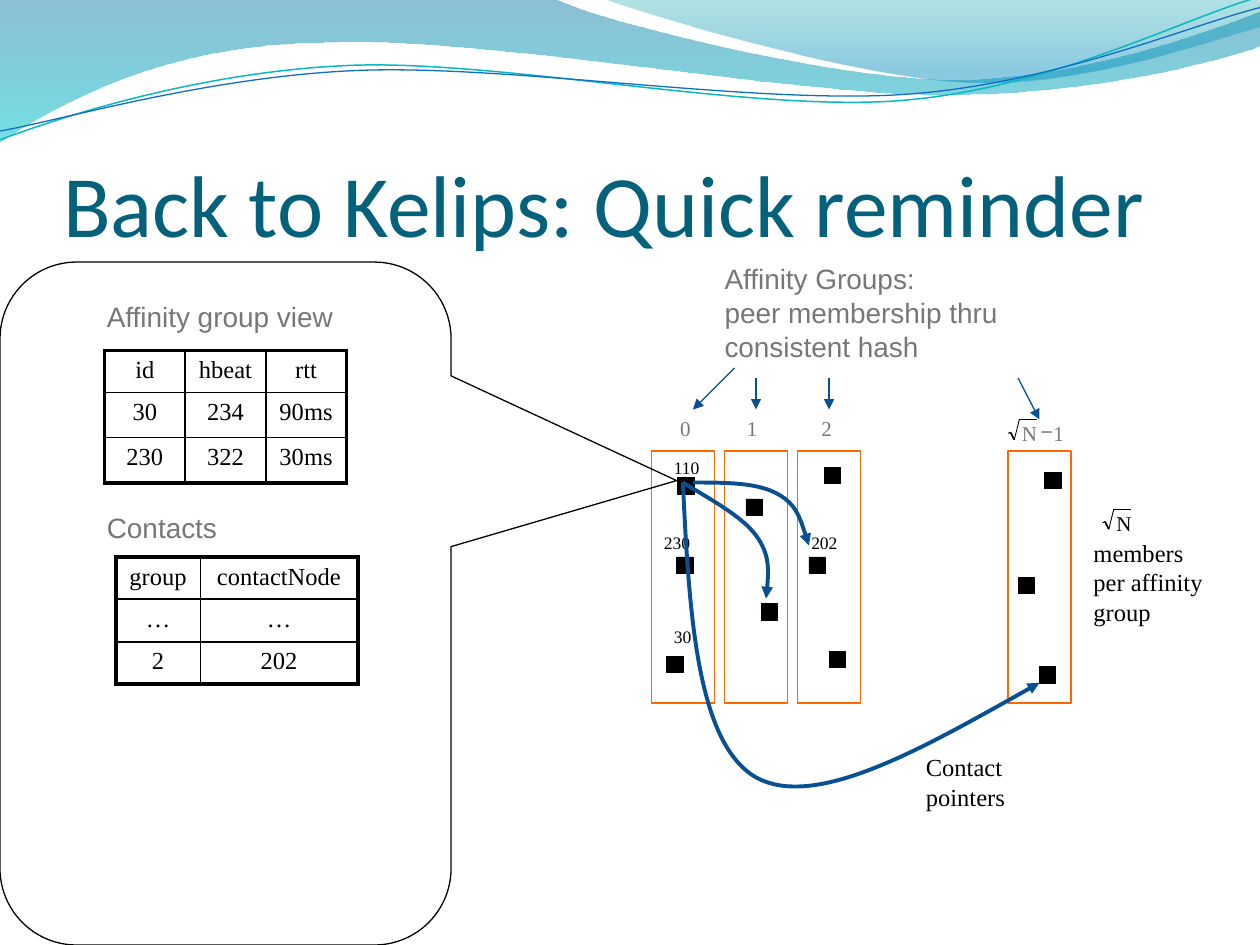
from dataclasses import dataclass
from itertools import pairwise

from lxml.etree import SubElement
from pptx import Presentation
from pptx.dml.color import RGBColor
from pptx.enum.shapes import MSO_CONNECTOR as Connector, MSO_SHAPE as Preset
from pptx.enum.text import MSO_ANCHOR as Anchor, PP_ALIGN as Align
from pptx.oxml.ns import qn
from pptx.util import Inches, Pt

Point = tuple[float, float]


@dataclass(frozen=True)
class Theme:
    title: str = "04617B"
    grey: str = "777777"
    black: str = "000000"
    orange: str = "FF6600"
    arrow: str = "085091"
    teal: str = "0AB8BF"
    blue: str = "0F6FC6"
    sans: str = "Arial"
    serif: str = "Times New Roman"
    heading: str = "Calibri"
    title_size: int = 50
    label_size: int = 16
    body_size: int = 14
    index_size: int = 12
    node_size: int = 10


@dataclass(frozen=True)
class Stop:
    position: float
    color: str
    opacity: int


@dataclass(frozen=True)
class Curve:
    """Start point, then steps of one point (straight) or three (cubic curve)."""
    start: Point
    steps: list[list[Point]]
    stops: tuple[Stop, ...] = ()
    color: str = ""
    width: float = 0
    arrow: bool = False


@dataclass(frozen=True)
class Grid:
    left: float
    top: float
    widths: list[float]
    heights: list[float]
    rows: list[list[str]]


THEME = Theme()
SQUARE = 0.13

WAVES = [
    Curve((0, -0.01), [
        [(4.4, -0.01)], [(4.76, 0.17), (6.64, 0.63), (7.58, 0.63)],
        [(8.53, 0.63), (9.58, 0.26), (10, 0.09)], [(10.01, 0.36)],
        [(9.83, 0.44), (8.7, 0.76), (7.46, 0.75)], [(6.22, 0.75), (3.82, 0.28), (2.57, 0.34)],
        [(1.29, 0.35), (0.46, 0.83), (-0.01, 1.13)]],
        stops=(Stop(0, "0074A1", 45), Stop(1, "00C6CF", 55))),
    Curve((4.79, -0.01), [
        [(5.09, 0.11), (6.82, 0.62), (7.69, 0.65)], [(8.56, 0.69), (9.61, 0.32), (10, 0.21)],
        [(10, 0)]],
        stops=(Stop(0, "00A1A9", 30), Stop(0.8, "008BBF", 45))),
    Curve((0, 1.11), [
        [(0.48, 0.93), (1.58, 0.57), (2.77, 0.52)], [(3.95, 0.47), (5.93, 0.89), (7.13, 0.8)],
        [(8.33, 0.71), (9.38, 0.15), (9.98, -0.02)]], color=THEME.teal, width=0.85),
    Curve((0, 1.04), [
        [(0.47, 0.96), (1.64, 0.61), (2.83, 0.56)], [(4.03, 0.51), (5.97, 0.83), (7.17, 0.75)],
        [(8.36, 0.67), (9.41, 0.21), (10, 0.06)]], color=THEME.blue, width=0.75),
]
POINTERS = [
    Curve(start, steps, color=THEME.arrow, width=2.25, arrow=True) for start, steps in [
        ((5.42, 3.83), [[(5.65, 3.97), (5.89, 4.1), (6, 4.25)],
                        [(6.11, 4.4), (6.1, 4.58), (6.08, 4.75)]]),
        ((5.5, 3.83), [[(5.76, 3.83), (6.01, 3.83), (6.17, 3.92)],
                       [(6.32, 4), (6.37, 4.17), (6.42, 4.33)]]),
        ((5.42, 3.83), [[(5.47, 4.87), (5.53, 5.9), (6, 6.17)],
                        [(6.47, 6.43), (7.36, 5.92), (8.25, 5.42)]])]]
GROUP_LEFTS = [5.17, 5.75, 6.33, 8]
GROUP_INDEXES = [("0", 5.3), ("1", 5.83), ("2", 6.42)]
NODES = [(5.38, 3.79), (5.37, 4.42), (5.29, 5.21), (6.58, 5.17), (5.92, 3.96), (6.04, 4.79),
         (6.54, 3.71), (6.42, 4.42), (8.29, 3.75), (8.08, 4.58), (8.25, 5.29)]
NODE_IDS = [("30", 5.25, 4.92), ("110", 5.25, 3.58), ("230", 5.17, 4.17), ("202", 6.34, 4.17)]
HASH_ARROWS = [((5.83, 2.92), (5.5, 3.25)), ((6, 3), (6, 3.25)),
               ((6.58, 3), (6.58, 3.25)), ((8.08, 3), (8.25, 3.33))]
RADICAL = [(0, 0.11), (0.02, 0.1), (0.05, 0.16), (0.09, 0), (0.23, 0)]
RADICAL_WIDTHS = [0.5, 1, 0.5, 0.5]
TABLES = [
    Grid(0.83, 2.78, [0.64] * 3, [0.33, 0.36, 0.36],
         [["id", "hbeat", "rtt"], ["30", "234", "90ms"], ["230", "322", "30ms"]]),
    Grid(0.92, 4.42, [0.67, 1.25], [0.33, 0.34, 0.33],
         [["group", "contactNode"], ["…", "…"], ["2", "202"]]),
]


def write(frame, text: str, *, size: float, font: str = THEME.serif, color: str = THEME.black,
          align=Align.LEFT, wrap: bool = True) -> None:
    frame.word_wrap = wrap
    for index, line in enumerate(text.split("\n")):
        paragraph = frame.add_paragraph() if index else frame.paragraphs[0]
        paragraph.alignment = align
        run = paragraph.add_run()
        run.text = line
        run.font.size, run.font.name = Pt(size), font
        run.font.color.rgb = RGBColor.from_string(color)


def add_text(slide, text: str, left: float, top: float, width: float, height: float, *,
             insets=(0.1, 0.05, 0.1, 0.05), anchor=Anchor.TOP, **style) -> None:
    frame = slide.shapes.add_textbox(*map(Inches, (left, top, width, height))).text_frame
    frame.margin_left, frame.margin_top, frame.margin_right, frame.margin_bottom = map(
        Inches, insets)
    frame.vertical_anchor = anchor
    write(frame, text, **style)


def set_line(shape, color: str, width: float, arrow: bool = False) -> None:
    shape.line.color.rgb = RGBColor.from_string(color)
    shape.line.width = Pt(width)
    if arrow:
        SubElement(shape.line._get_or_add_ln(), qn("a:tailEnd"), type="triangle")


def add_line(slide, start: Point, end: Point, color: str, width: float, arrow=False) -> None:
    line = slide.shapes.add_connector(Connector.STRAIGHT, *map(Inches, (*start, *end)))
    set_line(line, color, width, arrow)
    SubElement(line.element.spPr, qn("a:effectLst"))


def add_preset(slide, preset, left: float, top: float, width: float, height: float, *,
               line: str, line_width: float, fill: str = ""):
    shape = slide.shapes.add_shape(preset, *map(Inches, (left, top, width, height)))
    shape.shadow.inherit = False
    if fill:
        shape.fill.solid()
        shape.fill.fore_color.rgb = RGBColor.from_string(fill)
    else:
        shape.fill.background()
    set_line(shape, line, line_width)
    return shape


def add_curve(slide, curve: Curve) -> None:
    builder = slide.shapes.build_freeform(*map(Inches, curve.start))
    points = [(Inches(x), Inches(y)) for step in curve.steps for x, y in step]
    builder.add_line_segments(points, close=bool(curve.stops))
    shape = builder.convert_to_shape()
    shape.shadow.inherit = False
    # Merge each run of three straight segments into one cubic segment
    segments = iter(list(shape.element.iter(qn("a:lnTo"))))
    for step in curve.steps:
        parts = [next(segments) for _ in step]
        if len(parts) == 3:
            parts[0].tag = qn("a:cubicBezTo")
            for part in parts[1:]:
                parts[0].append(part[0])
                part.getparent().remove(part)
    if not curve.stops:
        shape.fill.background()
        set_line(shape, curve.color, curve.width, curve.arrow)
        return
    shape.fill.gradient()
    shape.fill.gradient_angle = 270
    for target, stop in zip(shape.fill.gradient_stops, curve.stops):
        target.position = stop.position
        target.color.rgb = RGBColor.from_string(stop.color)
    for color, stop in zip(shape.element.spPr.iter(qn("a:srgbClr")), curve.stops):
        SubElement(color, qn("a:alpha"), val=str(stop.opacity * 1000))
    shape.line.fill.background()


def add_root(slide, left: float, top: float, color: str) -> None:
    corners = [(left + x, top + y) for x, y in RADICAL]
    for (start, end), width in zip(pairwise(corners), RADICAL_WIDTHS):
        add_line(slide, start, end, THEME.black, width)
    add_symbol(slide, "N", left + 0.11, top + 0.01, color=color)


def add_symbol(slide, text: str, left: float, top: float, **style) -> None:
    add_text(slide, text, left, top, 0.12, 0.2, insets=(0, 0, 0, 0), wrap=False,
             size=THEME.index_size, **style)


def add_grid(slide, grid: Grid) -> None:
    last_row, last_column = len(grid.heights) - 1, len(grid.widths) - 1
    table = slide.shapes.add_table(
        last_row + 1, last_column + 1, Inches(grid.left), Inches(grid.top),
        Inches(sum(grid.widths)), Inches(sum(grid.heights))).table
    table.first_row = table.horz_banding = False
    for column, width in zip(table.columns, grid.widths):
        column.width = Inches(width)
    for r, (row, height) in enumerate(zip(table.rows, grid.heights)):
        row.height = Inches(height)
        for c, cell in enumerate(row.cells):
            cell.margin_left = cell.margin_right = Inches(0.05)
            write(cell.text_frame, grid.rows[r][c], size=THEME.body_size, align=Align.CENTER)
            outer = {"lnL": c == 0, "lnR": c == last_column, "lnT": r == 0, "lnB": r == last_row}
            properties = cell._tc.get_or_add_tcPr()
            for side, thick in outer.items():
                border = SubElement(properties, qn(f"a:{side}"), w=str(Pt(2.25 if thick else 1)))
                SubElement(SubElement(border, qn("a:solidFill")), qn("a:srgbClr"), val=THEME.black)
            cell.fill.background()


def main() -> None:
    presentation = Presentation()
    presentation.slide_width, presentation.slide_height = Inches(10), Inches(7.5)
    slide = presentation.slides.add_slide(presentation.slide_layouts[6])
    label = dict(size=THEME.label_size, font=THEME.sans, color=THEME.grey)

    # Header waves and title
    for wave in WAVES:
        add_curve(slide, wave)
    add_text(slide, "Affinity Groups:\npeer membership thru consistent hash",
             5.75, 2.08, 2.59, 0.8, insets=(0, 0, 0, 0), **label)
    add_text(slide, "Back to Kelips: Quick reminder", 0.5, 0.77, 9.08, 1.25,
             insets=(0, 0.05, 0, 0), anchor=Anchor.BOTTOM,
             size=THEME.title_size, font=THEME.heading, color=THEME.title)

    # Affinity groups and their nodes
    for left in GROUP_LEFTS:
        add_preset(slide, Preset.RECTANGLE, left, 3.58, 0.5, 2, line=THEME.orange, line_width=0.75)
    for text, left in GROUP_INDEXES:
        add_text(slide, text, left, 3.25, 0.28, 0.3, size=THEME.index_size,
                 color=THEME.grey, wrap=False)
    for left, top in NODES:
        add_preset(slide, Preset.RECTANGLE, left, top, SQUARE, SQUARE,
                   fill=THEME.black, line=THEME.black, line_width=0.38)
    for text, left, top in NODE_IDS:
        add_text(slide, text, left, top, 0.2 + 0.07 * len(text), 0.27,
                 size=THEME.node_size, wrap=False)
    for start, end in HASH_ARROWS:
        add_line(slide, start, end, THEME.arrow, 0.75, arrow=True)

    # Square roots and notes
    add_root(slide, 8, 3.33, THEME.grey)
    add_symbol(slide, "1", 8.36, 3.34, color=THEME.grey)
    add_symbol(slide, "−", 8.26, 3.32, font=THEME.sans, color=THEME.grey)
    add_text(slide, "Contact pointers", 7.25, 5.92, 1.33, 0.57, size=THEME.body_size)
    add_root(slide, 8.75, 4.04, THEME.black)
    add_text(slide, "members per affinity group", 8.58, 4.22, 1.17, 0.8, size=THEME.body_size)

    # Callout with the state of one node
    callout = add_preset(slide, Preset.ROUNDED_RECTANGULAR_CALLOUT, 0, 2.08, 3.58, 5.42,
                         line=THEME.black, line_width=0.75)
    for index, value in enumerate((1, -0.18, 0.17)):
        callout.adjustments[index] = value
    for grid in TABLES:
        add_grid(slide, grid)
    add_text(slide, "Affinity group view", 0.75, 2.33, 2.17, 0.37, **label)
    add_text(slide, "Contacts", 0.75, 4, 2.17, 0.37, **label)

    # Contact pointers
    for pointer in POINTERS:
        add_curve(slide, pointer)
    presentation.save("out.pptx")


if __name__ == "__main__":
    main()
